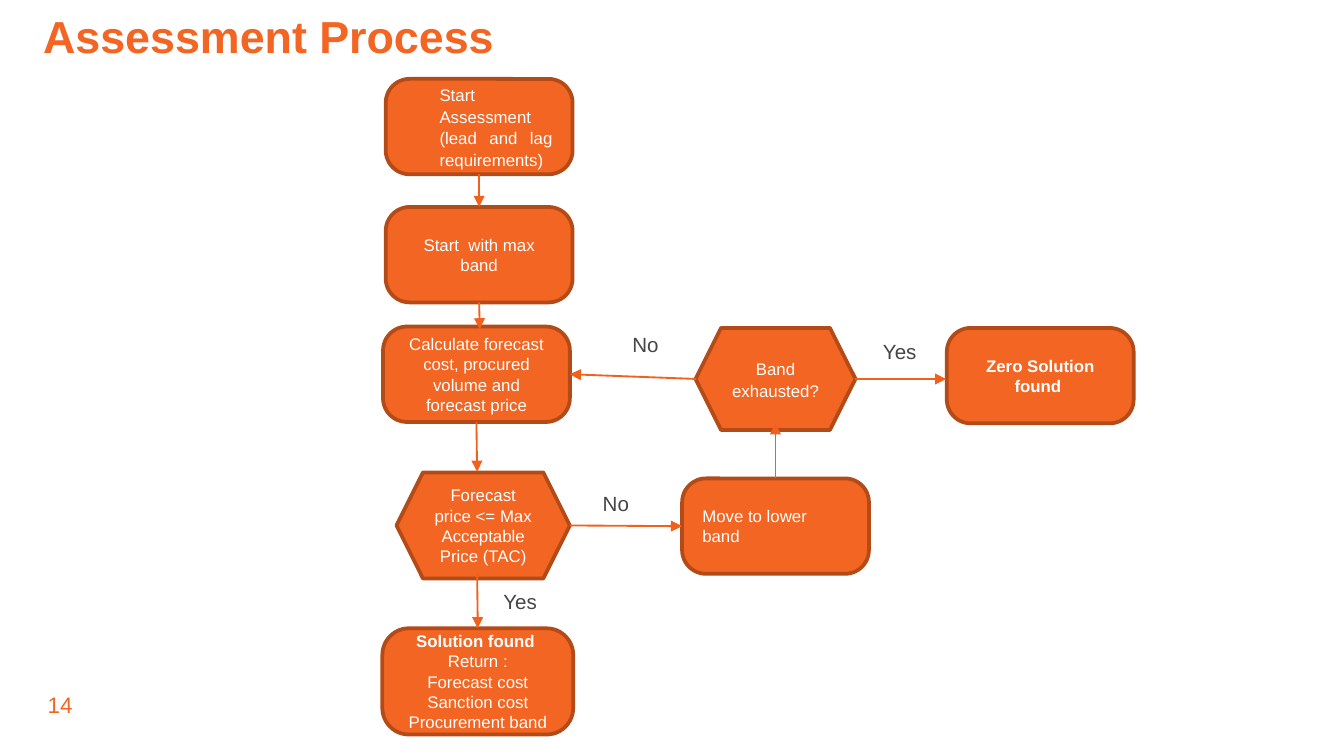
from typing import NamedTuple, Optional

from lxml.etree import SubElement as Sub
from pptx import Presentation
from pptx.dml.color import RGBColor as Rgb
from pptx.enum.shapes import MSO_CONNECTOR as Conn, MSO_SHAPE as Geo
from pptx.enum.text import MSO_ANCHOR as Anchor, PP_ALIGN as Align
from pptx.oxml.ns import qn
from pptx.util import Inches, Pt

# A 16:9 slide on a grid of 100 columns by 56.25 rows
prs = Presentation()
prs.slide_width, prs.slide_height = Inches(10), Inches(10 * 9 / 16)
COL, ROW = prs.slide_width / 100, prs.slide_height / 56.25
slide = prs.slides.add_slide(prs.slide_layouts[6])
shapes = slide.shapes

ORANGE, BROWN, ARROW = "F26522", "B34B19", "F2611C"
WHITE, GREY = "FFFFFF", "454545"
TOP, LEFT, BOTTOM, RIGHT = range(4)
MID = {"alignment": Align.CENTER}
LEAD = {"alignment": Align.JUSTIFY, "line_spacing": 1.07}
BAND = {"alignment": Align.CENTER, "line_spacing": 1.07, "space_after": Pt(8)}


class Node(NamedTuple):
    key: str
    x: float
    y: float
    lines: tuple
    w: float = 13.9
    h: float = 7.1
    geo: int = Geo.ROUNDED_RECTANGLE
    form: dict = MID
    bold: int = 0  # number of leading bold lines
    dent: float = 0  # left indent in columns


class Label(NamedTuple):
    x: float
    y: float
    w: float
    h: float
    text: str
    size: float = 11
    tint: str = GREY
    bold: bool = False
    wrap: bool = False
    form: dict = {}


class Arrow(NamedTuple):
    x1: float
    y1: float
    x2: float
    y2: float
    start: Optional[tuple] = None  # node key and side
    end: Optional[tuple] = None


def color(hue: str) -> Rgb:
    return Rgb.from_string(hue)


def place(x: float, y: float) -> tuple:
    return round(x * COL), round(y * ROW)


def style(item, form: dict) -> None:
    for name, val in form.items():
        setattr(item, name, val)


def write(para, text: str, size: float, tint: str, bold: bool, form: dict) -> None:
    style(para, form)
    run = para.add_run()
    run.text = text
    style(run.font, {"name": "Arial", "size": Pt(size), "bold": bold})
    run.font.color.rgb = color(tint)


def draw_node(node: Node):
    box = shapes.add_shape(node.geo, *place(node.x, node.y), *place(node.w, node.h))
    box.shadow.inherit = False
    box.fill.solid()
    box.fill.fore_color.rgb = color(ORANGE)
    box.line.color.rgb = color(BROWN)
    box.line.width = Pt(2)
    if node.geo == Geo.ROUNDED_RECTANGLE:
        box.adjustments[0] = 0.25
    frame = box.text_frame
    style(frame, {"word_wrap": True, "vertical_anchor": Anchor.MIDDLE})
    for i, line in enumerate(node.lines):
        para = frame.add_paragraph() if i else frame.paragraphs[0]
        if node.dent:
            para._p.get_or_add_pPr().set("marL", str(round(node.dent * COL)))
        write(para, line, 9, WHITE, i < node.bold, node.form)
    return box


def draw_label(tag: Label) -> None:
    box = shapes.add_textbox(*place(tag.x, tag.y), *place(tag.w, tag.h))
    frame = box.text_frame
    style(frame, {f"margin_{side}": 0 for side in ("left", "top", "right", "bottom")})
    frame.word_wrap = tag.wrap
    write(frame.paragraphs[0], tag.text, tag.size, tag.tint, tag.bold, tag.form)


def draw_arrow(arrow: Arrow, boxes: dict) -> None:
    line = shapes.add_connector(
        Conn.STRAIGHT, *place(arrow.x1, arrow.y1), *place(arrow.x2, arrow.y2))
    line.line.color.rgb = color(ARROW)
    line.line.width = Pt(1)
    Sub(line.line._get_or_add_ln(), qn("a:tailEnd"), type="triangle")
    Sub(line._element.spPr, qn("a:effectLst"))
    for join, spot in ((line.begin_connect, arrow.start), (line.end_connect, arrow.end)):
        if spot:
            join(boxes[spot[0]], spot[1])


# Steps and tests
NODES = (
    Node("start", 28.7, 5.87, ("Start Assessment", "(lead and lag requirements)"),
         form=LEAD, dent=2.5),
    Node("max", 28.7, 15.4, ("Start  with max band",)),
    Node("cost", 28.5, 24.3,
         ("Calculate forecast cost, procured volume and forecast price",)),
    Node("price", 29.5, 35.15, ("Forecast price <= Max Acceptable Price (TAC)",),
         12.9, 7.9, Geo.HEXAGON),
    Node("band", 51.75, 24.4, ("Band exhausted?",), 11.9, 7.6, Geo.HEXAGON, BAND),
    Node("found", 28.45, 46.75,
         ("Solution found ", "Return :", "Forecast cost", "Sanction cost",
          "Procurement band"), 14.2, 7.9, bold=1),
    Node("lower", 50.75, 35.6, ("Move to lower band",), form={"alignment": Align.LEFT}),
    Node("zero", 70.45, 24.4, ("Zero Solution found ",), bold=1),
)

# Page number, title and branch names
LABELS = (
    Label(3.55, 51.4, 9.1, 2, "14", 12, ORANGE, wrap=True),
    Label(3.2, 1.4, 92.9, 3.2, "Assessment Process", 24, ORANGE, True, True,
          {"line_spacing": 0.8}),
    Label(47.05, 24.7, 2, 1.9, "No"),
    Label(44.85, 36.55, 2, 1.9, "No"),
    Label(65.7, 25.2, 2.7, 1.9, "Yes"),
    Label(37.45, 43.85, 2.7, 1.9, "Yes"),
)

# Flow
ARROWS = (
    Arrow(35.7, 13, 35.7, 15.4, ("start", BOTTOM), ("max", TOP)),
    Arrow(35.7, 22.5, 35.7, 24.5, ("max", BOTTOM)),
    Arrow(35.5, 31.4, 35.5, 35.1, ("cost", BOTTOM)),
    Arrow(35.5, 42.7, 35.6, 46.8, None, ("found", TOP)),
    Arrow(42.4, 39.1, 50.7, 39.2, None, ("lower", LEFT)),
    Arrow(57.7, 35.6, 57.7, 31.5, ("lower", TOP)),
    Arrow(51.8, 28.2, 42.4, 27.9, None, ("cost", RIGHT)),
    Arrow(63.6, 28.2, 70.4, 28.2),
)

boxes = {node.key: draw_node(node) for node in NODES}
for tag in LABELS:
    draw_label(tag)
for arrow in ARROWS:
    draw_arrow(arrow, boxes)

prs.save("out.pptx")
